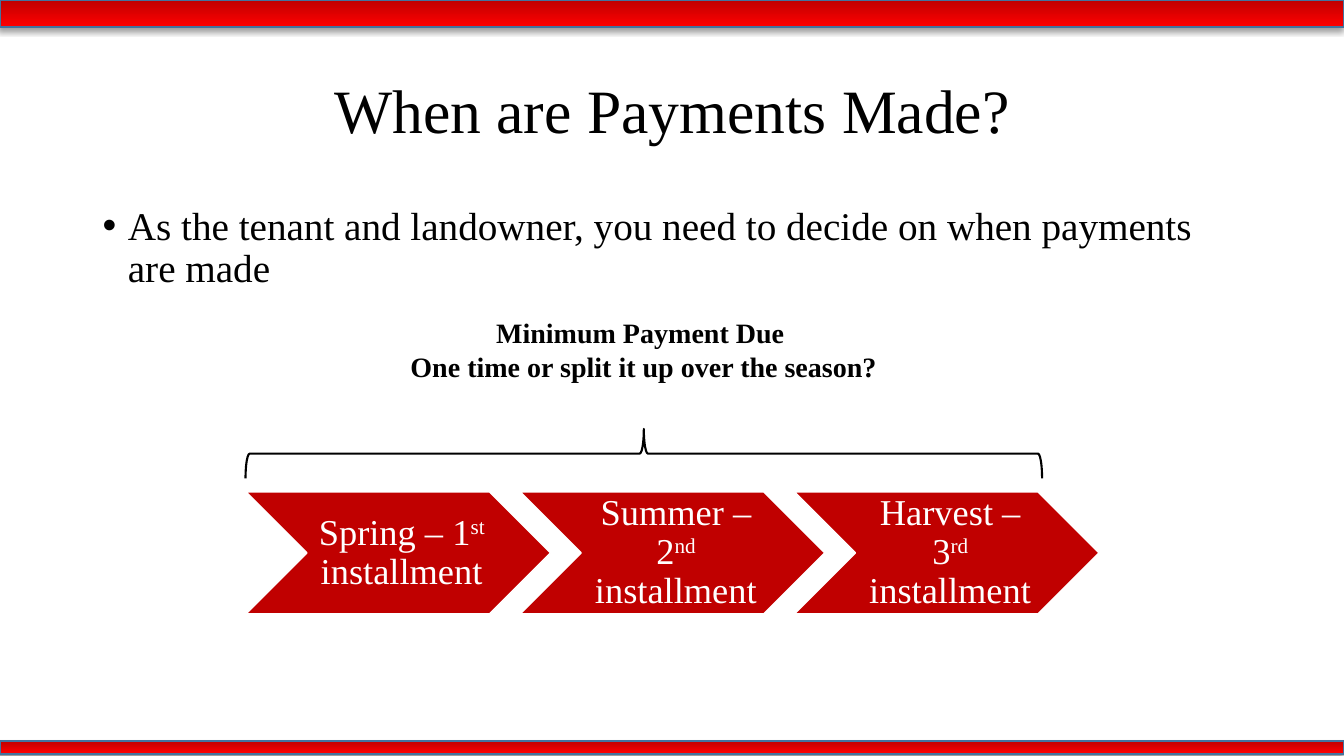
from lxml import etree
from pptx import Presentation
from pptx.dml.color import RGBColor
from pptx.enum.shapes import MSO_SHAPE
from pptx.enum.text import MSO_ANCHOR, PP_ALIGN
from pptx.oxml.ns import qn
from pptx.util import Inches, Pt

RECTANGLE, CHEVRON, LEFT_BRACE = MSO_SHAPE.RECTANGLE, MSO_SHAPE.CHEVRON, MSO_SHAPE.LEFT_BRACE
TOP, MIDDLE = MSO_ANCHOR.TOP, MSO_ANCHOR.MIDDLE
LEFT, CENTER = PP_ALIGN.LEFT, PP_ALIGN.CENTER
FONT = "Times New Roman"
BLACK, WHITE, DARK_RED, RED, BLUE = "000000", "FFFFFF", "C00000", "FF0000", "43739E"
SLIDE_WIDTH, SLIDE_HEIGHT = 13.33, 7.5
INSTALLMENTS = [("Spring – 1", "st"), ("Summer – 2", "nd"), ("Harvest – 3", "rd")]


def rgb(color):
    return RGBColor.from_string(color)


def add_outlined(slide, kind, box, line_color, line_width):
    outlined = slide.shapes.add_shape(kind, *map(Inches, box))
    outlined.shadow.inherit = False
    outlined.line.color.rgb = rgb(line_color)
    outlined.line.width = Pt(line_width)
    return outlined


def add_bar(slide, top, height):
    bar = add_outlined(slide, RECTANGLE, (0, top, SLIDE_WIDTH, height), BLUE, 1)
    bar.fill.gradient()
    bar.fill.gradient_angle = 270
    for stop, color in zip(bar.fill.gradient_stops, (DARK_RED, RED)):
        stop.color.rgb = rgb(color)
    for stop, position in zip(bar.fill.gradient_stops, (0, 1)):
        stop.position = position
    effects = bar._element.spPr.find(qn("a:effectLst"))
    shadow = etree.SubElement(effects, qn("a:outerShdw"), blurRad=str(Pt(4)),
                              dist=str(Pt(3)), dir="8100000", rotWithShape="0")
    shadow_color = etree.SubElement(shadow, qn("a:srgbClr"), val=BLACK)
    etree.SubElement(shadow_color, qn("a:alpha"), val="40000")


def add_text_frame(slide, box, anchor=TOP, insets=(0.1, 0.05, 0.1, 0.05)):
    frame = slide.shapes.add_textbox(*map(Inches, box)).text_frame
    frame.word_wrap = True
    frame.vertical_anchor = anchor
    (frame.margin_left, frame.margin_top,
     frame.margin_right, frame.margin_bottom) = map(Inches, insets)
    return frame


def add_run(paragraph, text, size, color=BLACK, bold=False, superscript=False):
    run = paragraph.add_run()
    run.text = text
    run.font.name = FONT
    run.font.size = Pt(size)
    run.font.bold = bold
    run.font.color.rgb = rgb(color)
    if superscript:
        run._r.get_or_add_rPr().set("baseline", "30000")


def add_title(slide, text):
    title = add_text_frame(slide, (0.92, 0.4, 11.5, 1.45), MIDDLE).paragraphs[0]
    title.alignment = CENTER
    title.line_spacing = 0.9
    add_run(title, text, 44)


def add_bullet(slide, text):
    bullet = add_text_frame(slide, (0.92, 2, 11.5, 4.76)).paragraphs[0]
    bullet.alignment = LEFT
    bullet.line_spacing = 0.9
    properties = bullet._p.get_or_add_pPr()
    properties.set("marL", str(Inches(0.25)))
    properties.set("indent", str(Inches(-0.25)))
    etree.SubElement(properties, qn("a:buFont"), typeface="Arial")
    etree.SubElement(properties, qn("a:buChar"), char="•")
    add_run(bullet, text, 28)


def add_installment(slide, left, season, ordinal):
    top, height = 4.88, 1.21
    chevron = add_outlined(slide, CHEVRON, (left, top, 3.02, height), WHITE, 1)
    chevron.fill.solid()
    chevron.fill.fore_color.rgb = rgb(DARK_RED)
    label = add_text_frame(slide, (left + height / 2, top, 1.81, height), MIDDLE,
                           (0.11, 0.04, 0.04, 0.04)).paragraphs[0]
    label.alignment = CENTER
    label.line_spacing = 0.9
    add_run(label, season, 26, WHITE)
    add_run(label, ordinal, 26, WHITE, superscript=True)
    add_run(label, " installment", 26, WHITE)


def add_brace(slide):
    brace = add_outlined(slide, LEFT_BRACE, (6.14, 0.55, 0.49, 7.9), BLACK, 1.5)
    brace.fill.background()
    brace.rotation = 90


def add_caption(slide, lines):
    frame = add_text_frame(slide, (3.93, 3.08, 4.91, 0.77))
    for index, line in enumerate(lines):
        paragraph = frame.add_paragraph() if index else frame.paragraphs[0]
        paragraph.alignment = CENTER
        add_run(paragraph, line, 20, bold=True)


def main():
    presentation = Presentation()
    presentation.slide_width = Inches(SLIDE_WIDTH)
    presentation.slide_height = Inches(SLIDE_HEIGHT)
    slide = presentation.slides.add_slide(presentation.slide_layouts[6])
    add_bar(slide, 0, 0.27)
    add_bar(slide, 7.35, 0.13)
    add_title(slide, "When are Payments Made?")
    add_bullet(slide, "As the tenant and landowner, you need to decide on when payments are made")
    for index, (season, ordinal) in enumerate(INSTALLMENTS):
        add_installment(slide, 2.44 + 2.72 * index, season, ordinal)
    add_brace(slide)
    add_caption(slide, ["Minimum Payment Due ", "One time or split it up over the season?"])
    presentation.save("out.pptx")


if __name__ == "__main__":
    main()
